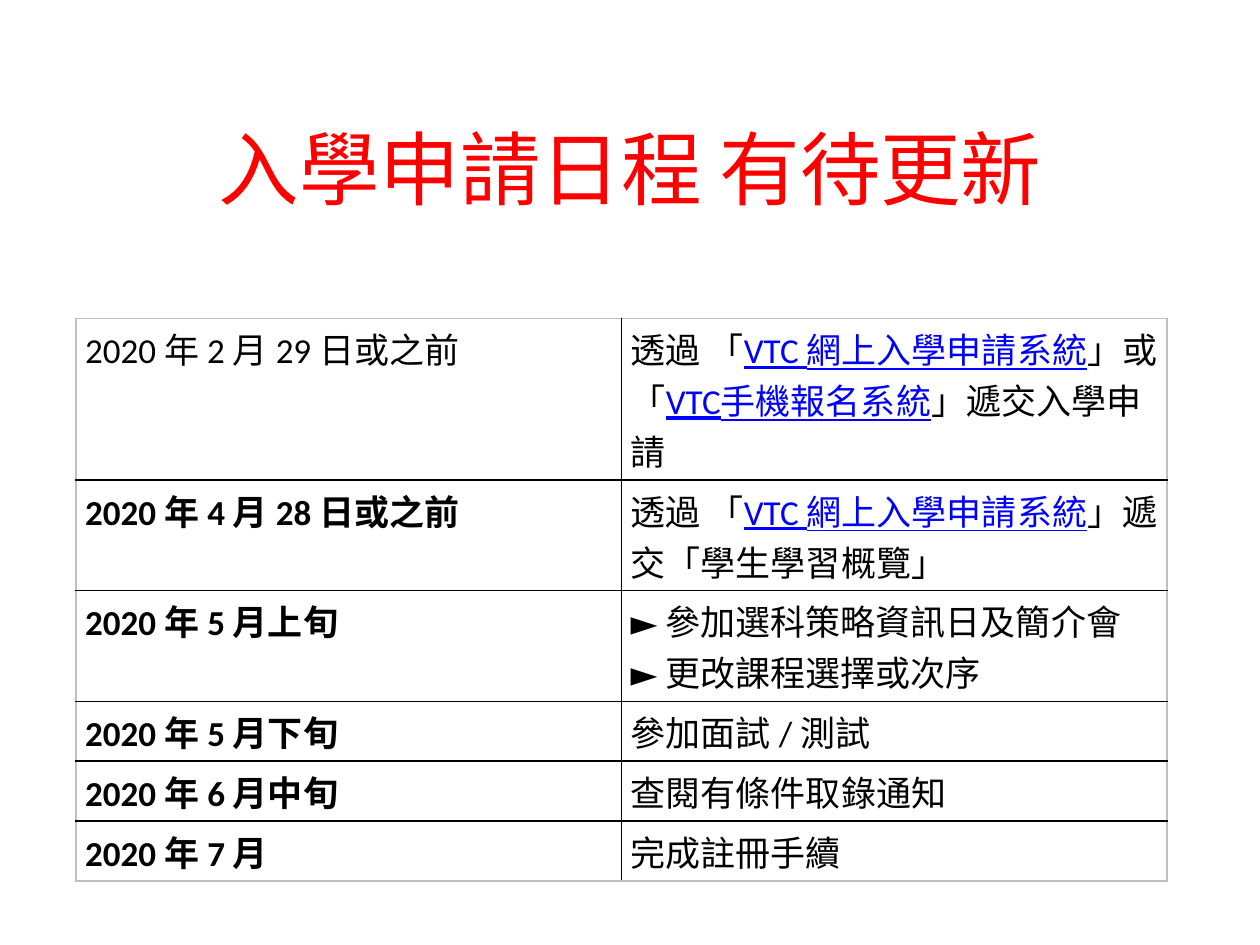
from lxml import etree
from pptx import Presentation
from pptx.dml.color import RGBColor
from pptx.enum.text import MSO_ANCHOR, PP_ALIGN
from pptx.oxml.ns import qn
from pptx.util import Pt

CENTER = PP_ALIGN.CENTER
MIDDLE = MSO_ANCHOR.MIDDLE
TOP = MSO_ANCHOR.TOP

RED = RGBColor(0xFF, 0x00, 0x00)
BLACK = RGBColor(0x00, 0x00, 0x00)
GREY = RGBColor(0xBF, 0xBF, 0xBF)
LINK_BLUE = RGBColor(0x00, 0x00, 0xFF)
TITLE_ONLY = 5

# Date, action, row height; the parts between bars are styled as links
SCHEDULE = [
    ("2020 年 2 月 29 日或之前",
     "透過 「|VTC 網上入學申請系統|」或「|VTC手機報名系統|」遞交入學申請", 75.6),
    ("2020 年 4 月 28 日或之前",
     "透過 「|VTC 網上入學申請系統|」遞交「學生學習概覽」", 52.5),
    ("2020 年 5 月上旬",
     "► 參加選科策略資訊日及簡介會\n► 更改課程選擇或次序", 52.5),
    ("2020 年 5 月下旬", "參加面試 / 測試", 28.8),
    ("2020 年 6 月中旬", "查閱有條件取錄通知", 28.8),
    ("2020 年 7 月", "完成註冊手續", 28.8),
]


def add_title(slide, text, left, top, width, height):
    title = slide.shapes.title
    title.left, title.top = Pt(left), Pt(top)
    title.width, title.height = Pt(width), Pt(height)
    title.text_frame.text = text
    title.text_frame.vertical_anchor = MIDDLE
    heading = title.text_frame.paragraphs[0]
    heading.alignment = CENTER
    heading.font.name = "Arial"
    heading.font.size = Pt(46)
    heading.font.color.rgb = RED


def set_borders(cell, edges):
    """Draw the cell's edges; edges maps a side to its colour."""
    properties = cell._tc.get_or_add_tcPr()
    for position, side in enumerate(("L", "R", "T", "B")):
        line = etree.Element(qn(f"a:ln{side}"), w=str(Pt(1)))
        fill = etree.SubElement(line, qn("a:solidFill"))
        etree.SubElement(fill, qn("a:srgbClr"), val=str(edges[side]))
        properties.insert(position, line)


def write_cell(cell, text, bold):
    cell.margin_left = cell.margin_right = Pt(5.2)
    cell.margin_top = cell.margin_bottom = Pt(2.6)
    cell.vertical_anchor = TOP
    cell.fill.background()
    paragraph = cell.text_frame.paragraphs[0]
    paragraph.font.name = "Calibri"
    paragraph.font.size = Pt(20)
    paragraph.font.bold = bold
    paragraph.font.color.rgb = BLACK
    for part_index, part in enumerate(text.split("|")):
        for line_index, line in enumerate(part.split("\n")):
            if line_index:
                paragraph.add_line_break()
            run = paragraph.add_run()
            run.text = line
            if part_index % 2:
                run.font.color.rgb = LINK_BLUE
                run.font.underline = True


def add_schedule(slide, left, top, width):
    last_row, last_column = len(SCHEDULE) - 1, 1
    height = sum(row_height for _, _, row_height in SCHEDULE)
    table = slide.shapes.add_table(last_row + 1, last_column + 1, Pt(left),
                                   Pt(top), Pt(width), Pt(height)).table
    table.first_row = table.horz_banding = False
    for column in table.columns:
        column.width = Pt(width / 2)

    for row, (date, action, row_height) in enumerate(SCHEDULE):
        table.rows[row].height = Pt(row_height)
        for column, text in enumerate((date, action)):
            cell = table.cell(row, column)
            # Every date but the first is bold
            write_cell(cell, text, bold=column == 0 and row > 0)
            # Grey frame, black inner lines
            set_borders(cell, {
                "L": GREY if column == 0 else BLACK,
                "R": GREY if column == last_column else BLACK,
                "T": GREY if row == 0 else BLACK,
                "B": GREY if row == last_row else BLACK,
            })


def main():
    presentation = Presentation()
    presentation.slide_width = Pt(720)
    presentation.slide_height = Pt(540)
    slide = presentation.slides.add_slide(
        presentation.slide_layouts[TITLE_ONLY])
    add_title(slide, "入學申請日程 有待更新", 52.5, 36, 615, 119.5)
    add_schedule(slide, 43.5, 182, 623.5)
    presentation.save("out.pptx")


if __name__ == "__main__":
    main()
